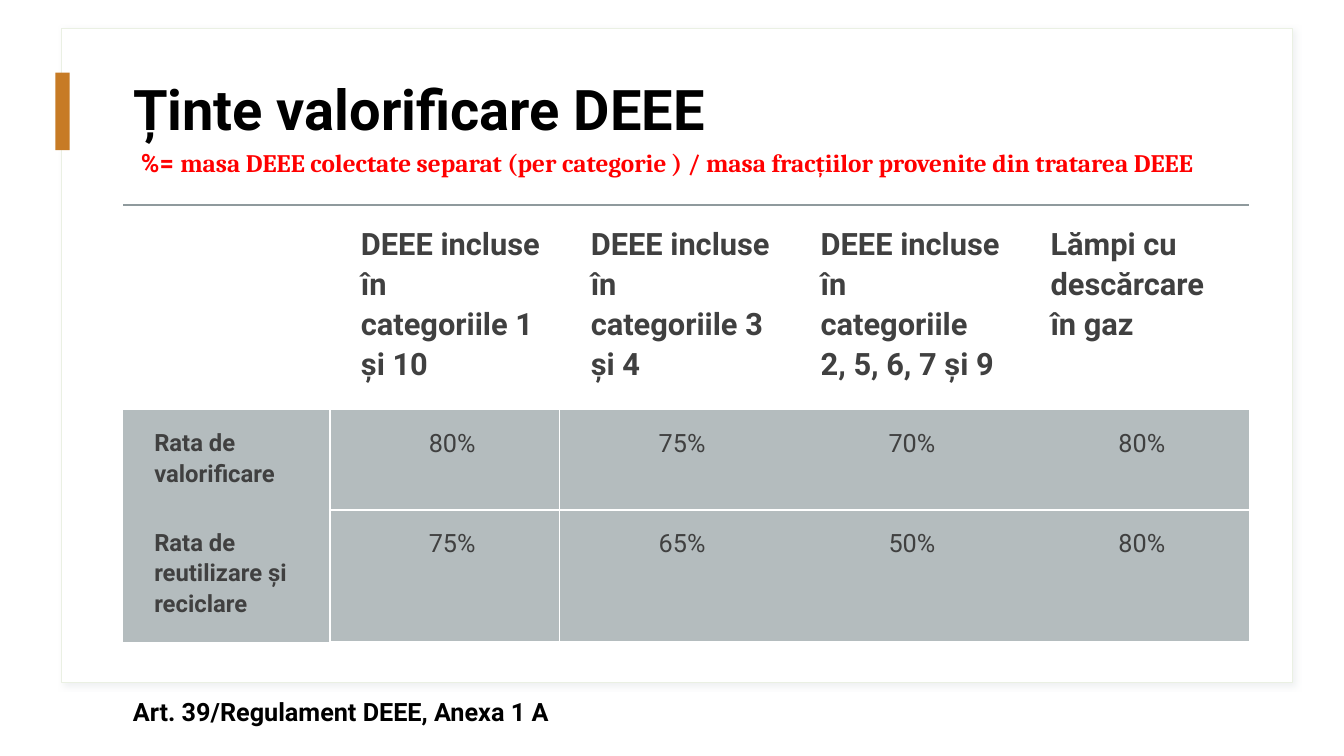
import dataclasses

import lxml.etree
import pptx
import pptx.dml.color
import pptx.enum.shapes
import pptx.enum.text
import pptx.oxml.ns
import pptx.util

PX = 9144
COLORS = {
    "white": "FFFFFF", "black": "000000", "red": "FF0000", "ink": "404040",
    "card_line": "EAF0E3", "shadow": "C8CFD3", "accent": "C77B25",
    "cell": "B4BCBE", "rule": "8F9A9D",
}
ALIGN = pptx.enum.text.PP_ALIGN
NO_STYLE = "{2D5ABB26-0587-4C30-8999-92F81FD0307C}"
COLUMN_WIDTHS = [205, 228, 228, 228, 228]
ROW_HEIGHTS = [204, 99, 131]
TARGETS = [
    ["", "DEEE incluse în categoriile 1 și 10", "DEEE incluse în categoriile 3 și 4",
     "DEEE incluse în categoriile 2, 5, 6, 7 și 9", "Lămpi cu descărcare în gaz"],
    ["Rata de valorificare", "80%", "75%", "70%", "80%"],
    ["Rata de reutilizare și reciclare", "75%", "65%", "50%", "80%"],
]


@dataclasses.dataclass(frozen=True)
class Area:
    left: int
    top: int
    width: int
    height: int

    def emu(self) -> list[int]:
        return [side * PX for side in dataclasses.astuple(self)]


@dataclasses.dataclass(frozen=True)
class Span:
    text: str
    size: int
    color: str
    font: str = "Roboto"
    bold: bool = True


@dataclasses.dataclass(frozen=True)
class Note:
    area: Area
    spans: list[Span]


@dataclasses.dataclass(frozen=True)
class Panel:
    area: Area
    fill: str
    line: str | None = None


CARD = Panel(Area(61, 28, 1221, 649), "white", "card_line")
ACCENT = Panel(Area(55, 72, 14, 77), "accent")
TITLE = Note(Area(122, 56, 1119, 111), [Span("Ținte valorificare DEEE", 40, "black")])
TABLE_AREA = Area(122, 203, sum(COLUMN_WIDTHS), sum(ROW_HEIGHTS))
NOTES = [
    Note(Area(130, 141, 1136, 40), [
        Span("%= ", 18, "red"),
        Span("masa DEEE colectate separat (per categorie ) / masa fracțiilor "
             "provenite din tratarea DEEE", 18, "red", "Cambria"),
    ]),
    Note(Area(122, 686, 477, 40), [Span("Art. 39/Regulament DEEE, Anexa 1 A", 18, "black")]),
]


def rgb(name: str) -> pptx.dml.color.RGBColor:
    return pptx.dml.color.RGBColor.from_string(COLORS[name])


def add_xml(parent, tag: str, **attributes: str):
    return lxml.etree.SubElement(parent, pptx.oxml.ns.qn(tag), attributes)


def add_color(parent, name: str, opacity: int) -> None:
    color = add_xml(parent, "a:srgbClr", val=COLORS[name])
    add_xml(color, "a:alpha", val=str(opacity * 1000))


def write_spans(paragraph, spans: list[Span]) -> None:
    for span in spans:
        run = paragraph.add_run()
        run.text = span.text
        run.font.name = span.font
        run.font.size = pptx.util.Pt(span.size)
        run.font.bold = span.bold
        run.font.color.rgb = rgb(span.color)


def draw_panel(page, panel: Panel):
    box = page.shapes.add_shape(pptx.enum.shapes.MSO_SHAPE.RECTANGLE, *panel.area.emu())
    box.shadow.inherit = False
    box.fill.solid()
    box.fill.fore_color.rgb = rgb(panel.fill)
    if panel.line:
        box.line.color.rgb = rgb(panel.line)
        box.line.width = pptx.util.Pt(1)
    else:
        box.line.fill.background()
    return box


def draw_card(page) -> None:
    card = draw_panel(page, CARD)
    effects = card._element.spPr.find(pptx.oxml.ns.qn("a:effectLst"))
    shadow = add_xml(effects, "a:outerShdw", blurRad=str(pptx.util.Pt(4)),
                     dist=str(pptx.util.Pt(3)), dir="2700000", algn="tl", rotWithShape="0")
    add_color(shadow, "shadow", 30)


def draw_title(page) -> None:
    title = page.shapes.title
    page.shapes._spTree.append(title._element)
    title.left, title.top, title.width, title.height = TITLE.area.emu()
    frame = title.text_frame
    frame.vertical_anchor = pptx.enum.text.MSO_ANCHOR.MIDDLE
    frame.auto_size = pptx.enum.text.MSO_AUTO_SIZE.NONE
    paragraph = frame.paragraphs[0]
    paragraph.alignment = ALIGN.LEFT
    paragraph.line_spacing = 0.9
    write_spans(paragraph, TITLE.spans)


def draw_note(page, note: Note) -> None:
    box = page.shapes.add_textbox(*note.area.emu())
    box.text_frame.word_wrap = False
    box.text_frame.auto_size = pptx.enum.text.MSO_AUTO_SIZE.SHAPE_TO_FIT_TEXT
    write_spans(box.text_frame.paragraphs[0], note.spans)


def draw_border(cell, side: str, color: str, opacity: int = 100) -> None:
    line = add_xml(cell._tc.get_or_add_tcPr(), f"a:ln{side}", w=str(pptx.util.Pt(1.5)))
    add_color(add_xml(line, "a:solidFill"), color, opacity)


def style_cell(cell, row: int, column: int) -> None:
    if row == 0:
        draw_border(cell, "T", "rule", 60)
        cell.fill.background()
        return
    sides = "R" if column == 0 else "L" * (column == 1) + "T" * (row == 2) + "B"
    for side in sides:
        draw_border(cell, side, "white")
    cell.fill.solid()
    cell.fill.fore_color.rgb = rgb("cell")
    color = cell._tc.tcPr.find(".//" + pptx.oxml.ns.qn("a:srgbClr"))
    add_xml(color, "a:alpha", val="20000" if column == 0 else "35000")


def write_cell(cell, text: str, row: int, column: int) -> None:
    is_value = row > 0 and column > 0
    cell.margin_left = 31 * PX
    cell.margin_top = cell.margin_right = cell.margin_bottom = (16 if row else 19) * PX
    paragraph = cell.text_frame.paragraphs[0]
    paragraph.alignment = ALIGN.CENTER if is_value else ALIGN.LEFT
    paragraph.line_spacing = 1.1
    paragraph.space_before = pptx.util.Pt(10)
    paragraph.space_after = pptx.util.Pt(8)
    size = 22 if row == 0 else 18 if is_value else 17
    write_spans(paragraph, [Span(text, size, "ink", bold=not is_value)])


def draw_table(page) -> None:
    frame = page.shapes.add_table(len(ROW_HEIGHTS), len(COLUMN_WIDTHS), *TABLE_AREA.emu())
    table = frame.table
    table.horz_banding = False
    table._tbl.tblPr.find(pptx.oxml.ns.qn("a:tableStyleId")).text = NO_STYLE
    for column, width in zip(table.columns, COLUMN_WIDTHS):
        column.width = width * PX
    for row, height in zip(table.rows, ROW_HEIGHTS):
        row.height = height * PX
    for row, texts in enumerate(TARGETS):
        for column, text in enumerate(texts):
            cell = table.cell(row, column)
            style_cell(cell, row, column)
            if text:
                write_cell(cell, text, row, column)


def main() -> None:
    """Build the slide of WEEE recovery targets."""
    deck = pptx.Presentation()
    deck.slide_width, deck.slide_height = 1333 * PX, 750 * PX
    page = deck.slides.add_slide(deck.slide_layouts.get_by_name("Title Only"))
    draw_card(page)
    draw_title(page)
    draw_panel(page, ACCENT)
    draw_table(page)
    for note in NOTES:
        draw_note(page, note)
    deck.save("out.pptx")


if __name__ == "__main__":
    main()
